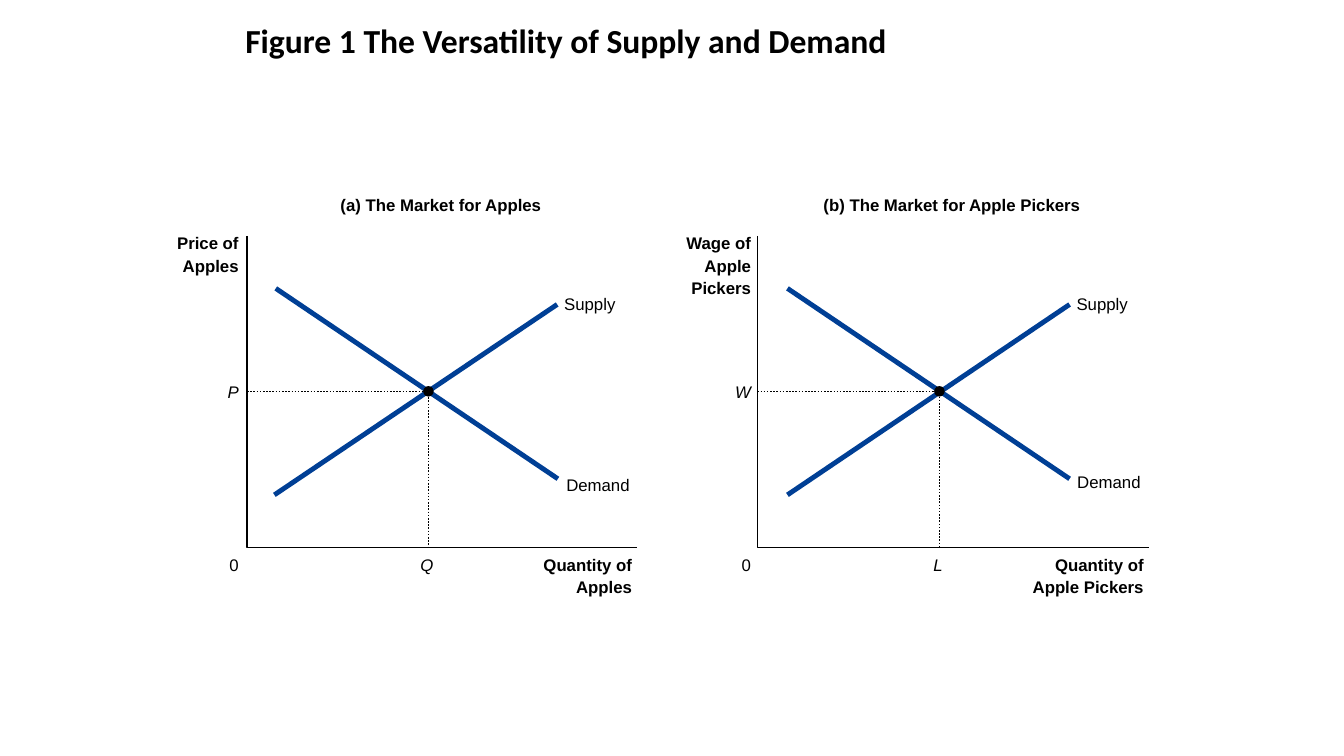
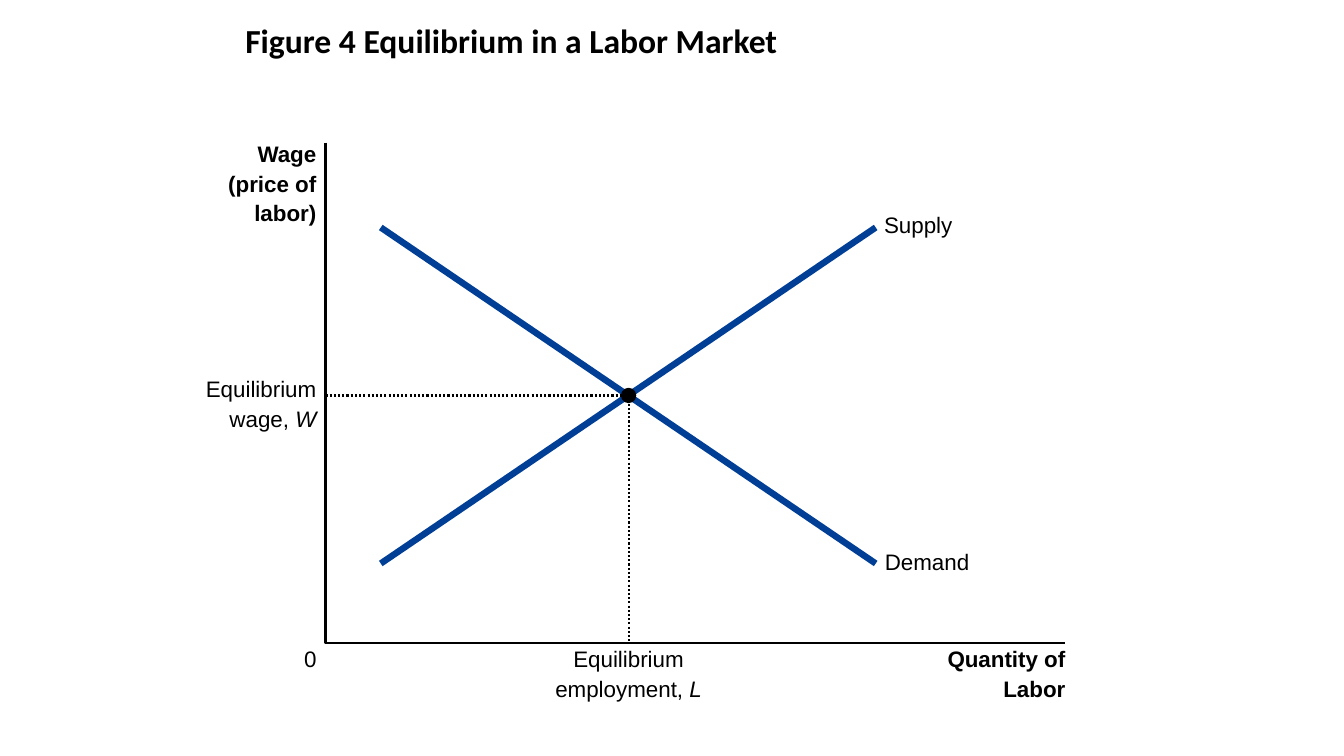
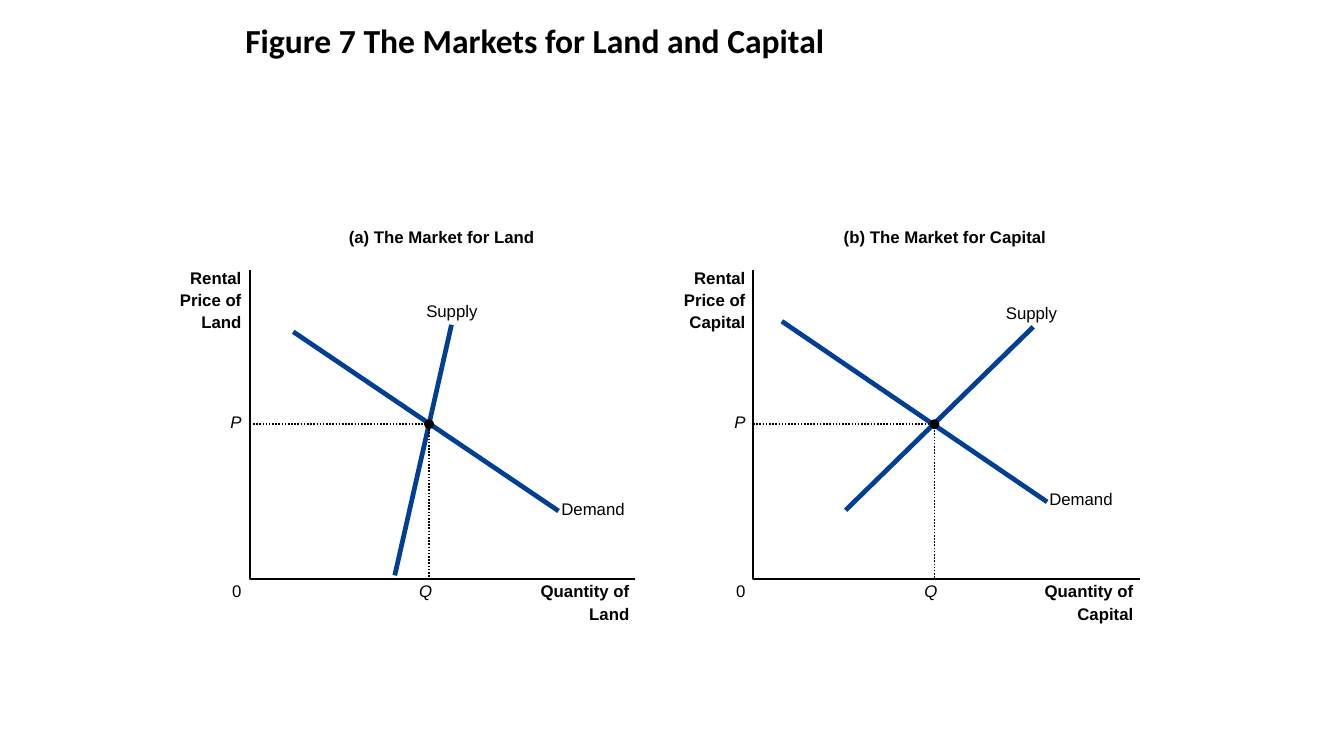
from lxml.etree import SubElement
from pptx import Presentation
from pptx.dml.color import RGBColor
from pptx.enum.dml import MSO_LINE
from pptx.enum.shapes import MSO_CONNECTOR, MSO_SHAPE
from pptx.enum.text import MSO_ANCHOR, MSO_AUTO_SIZE, PP_ALIGN
from pptx.oxml.ns import qn
from pptx.util import Pt

BLACK = RGBColor(0, 0, 0)
BLUE = RGBColor(0x00, 0x3F, 0x95)
LEFT, MID, RIGHT = PP_ALIGN.LEFT, PP_ALIGN.CENTER, PP_ALIGN.RIGHT
SHARE = {LEFT: 0, MID: 0.5, RIGHT: 1}

P, Q, W, L = [[("", letter)] for letter in "PQWL"]

FIGURES = [
    {
        "title": "Figure 1 The Versatility of Supply and Demand",
        "size": 12, "axis": 1.13, "curve": 3.5, "dot": 7.5,
        "top": 168.5, "base": 391, "level": 279.5,
        "drop": 5, "rise": 6.5, "shift": 1, "head": 139,
        "panels": [
            {
                "name": "(a) The Market for Apples", "center": 315,
                "left": 176.5, "end": 455, "edge": 170.5, "limit": 451.5,
                "ylabel": ["Price of", "Apples"],
                "xlabel": ["Quantity of", "Apples"],
                "price": P, "amount": Q, "cross": 306,
                "curves": [
                    ("Demand", (197, 206, 398.5, 342), (404.5, 339)),
                    ("Supply", (398, 217.5, 196, 353.5), (403, 210)),
                ],
            },
            {
                "name": "(b) The Market for Apple Pickers", "center": 680,
                "left": 541, "end": 820.5, "edge": 536.5, "limit": 817,
                "ylabel": ["Wage of", "Apple", "Pickers"],
                "xlabel": ["Quantity of", "Apple Pickers"],
                "price": W, "amount": L, "cross": 671,
                "curves": [
                    ("Demand", (562.5, 206, 764, 342), (769.5, 337)),
                    ("Supply", (764, 217.5, 562.5, 353.5), (769, 210)),
                ],
            },
        ],
    },
    {
        "title": "Figure 4 Equilibrium in a Labor Market",
        "size": 16, "axis": 1.5, "curve": 4.63, "dot": 11,
        "top": 102, "base": 459.5, "level": 282.5,
        "drop": 1.5, "rise": 14.5, "shift": 0, "head": 0,
        "panels": [
            {
                "name": "", "center": 0,
                "left": 232.5, "end": 761, "edge": 226, "limit": 761,
                "ylabel": ["Wage", "(price of", "labor)"],
                "xlabel": ["Quantity of", "Labor"],
                "price": ["Equilibrium", ("wage, ", "W")],
                "amount": ["Equilibrium", ("employment, ", "L")],
                "cross": 449,
                "curves": [
                    ("Supply", (625.5, 162.5, 272, 402.5), (631.5, 150.5)),
                    ("Demand", (272, 162.5, 625.5, 402.5), (632, 391.5)),
                ],
            },
        ],
    },
    {
        "title": "Figure 7 The Markets for Land and Capital",
        "size": 12, "axis": 1.13, "curve": 3.38, "dot": 7,
        "top": 193, "base": 413.5, "level": 303,
        "drop": 1.5, "rise": 9, "shift": 2.5, "head": 162,
        "panels": [
            {
                "name": "(a) The Market for Land", "center": 315.5,
                "left": 178.5, "end": 453.5, "edge": 172.5, "limit": 449.5,
                "ylabel": ["Rental", "Price of", "Land"],
                "xlabel": ["Quantity of", "Land"],
                "price": P, "amount": Q, "cross": 306.5,
                "curves": [
                    ("Demand", (209.5, 237, 399, 365), (401, 356.5)),
                    ("Supply", (322.5, 232, 282, 411), (304.5, 214.5)),
                ],
            },
            {
                "name": "(b) The Market for Capital", "center": 675,
                "left": 538, "end": 814.5, "edge": 532.5, "limit": 809.5,
                "ylabel": ["Rental", "Price of", "Capital"],
                "xlabel": ["Quantity of", "Capital"],
                "price": P, "amount": Q, "cross": 667.5,
                "curves": [
                    ("Demand", (558.5, 229.5, 748, 358.5), (749.5, 349)),
                    ("Supply", (738, 233.5, 604, 364.5), (718.5, 216)),
                ],
            },
        ],
    },
]


def style(font, name, size, bold):
    font.name, font.size, font.bold = name, Pt(size), bold
    font.color.rgb = BLACK


def stroke(line, color, width):
    line.color.rgb = color
    line.width = Pt(width)


def add_title(slide, text):
    title = slide.shapes.title
    title.left, title.top = Pt(168), Pt(4.5)
    title.width, title.height = Pt(648), Pt(54)
    frame = title.text_frame
    frame.text = text
    frame.auto_size = MSO_AUTO_SIZE.NONE
    frame.vertical_anchor = MSO_ANCHOR.MIDDLE
    para = frame.paragraphs[0]
    para.alignment = LEFT
    para.line_spacing = 0.8
    style(para.font, "Calibri", 24, True)


def add_label(slide, lines, x, y, size, align, bold=False):
    chars = max(len("".join(line)) for line in lines)
    width = (chars * 0.55 + 1) * size
    left = x - width * SHARE[align]
    box = slide.shapes.add_textbox(
        Pt(left), Pt(y), Pt(width), Pt(len(lines) * size * 1.28))
    frame = box.text_frame
    frame.word_wrap = True
    frame.margin_left = frame.margin_right = 0
    frame.margin_top = frame.margin_bottom = 0
    for index, line in enumerate(lines):
        para = frame.add_paragraph() if index else frame.paragraphs[0]
        para.alignment = align
        para.space_after = Pt(size * 0.13)
        style(para.font, "Arial", size, bold)
        plain, slanted = (line, "") if isinstance(line, str) else line
        if plain:
            para.add_run().text = plain
        if slanted:
            run = para.add_run()
            run.text = slanted
            run.font.italic = True


def add_bend(slide, points, width):
    spots = [(Pt(x), Pt(y)) for x, y in points]
    maker = slide.shapes.build_freeform(*spots[0])
    maker.add_line_segments(spots[1:], close=False)
    bend = maker.convert_to_shape()
    bend.shadow.inherit = False
    bend.fill.background()
    stroke(bend.line, BLACK, width)
    return bend


def add_curve(slide, ends, width):
    curve = slide.shapes.add_connector(
        MSO_CONNECTOR.STRAIGHT, *[Pt(end) for end in ends])
    stroke(curve.line, BLUE, width)
    SubElement(curve._element.spPr, qn("a:effectLst"))


def add_dot(slide, x, y, size):
    dot = slide.shapes.add_shape(
        MSO_SHAPE.OVAL, Pt(x - size / 2), Pt(y - size / 2), Pt(size), Pt(size))
    dot.shadow.inherit = False
    dot.fill.solid()
    dot.fill.fore_color.rgb = BLACK
    dot.line.fill.background()


def add_panel(slide, fig, panel):
    size, top, base, level = (fig[key] for key in ("size", "top", "base", "level"))
    left, edge, cross = panel["left"], panel["edge"], panel["cross"]
    under = base + fig["drop"]
    add_bend(slide, [(left, top), (left, base), (panel["end"], base)], fig["axis"])
    for name, ends, spot in panel["curves"]:
        add_curve(slide, ends, fig["curve"])
        add_label(slide, [name], *spot, size, LEFT)
    guide = add_bend(
        slide, [(left, level), (cross, level), (cross, base)], fig["axis"])
    guide.line.dash_style = MSO_LINE.ROUND_DOT
    add_dot(slide, cross, level, fig["dot"])
    if panel["name"]:
        add_label(slide, [panel["name"]], panel["center"], fig["head"], size, MID, True)
    add_label(slide, panel["ylabel"], edge, top - 2, size, RIGHT, True)
    add_label(slide, panel["xlabel"], panel["limit"], under, size, RIGHT, True)
    add_label(slide, ["0"], edge, under, size, RIGHT)
    add_label(slide, panel["price"], edge, level - fig["rise"], size, RIGHT)
    add_label(slide, panel["amount"], cross - fig["shift"], under, size, MID)


def main():
    deck = Presentation()
    deck.slide_width, deck.slide_height = Pt(960), Pt(540)
    for fig in FIGURES:
        slide = deck.slides.add_slide(deck.slide_layouts[5])
        add_title(slide, fig["title"])
        for panel in fig["panels"]:
            add_panel(slide, fig, panel)
    deck.save("out.pptx")


if __name__ == "__main__":
    main()
